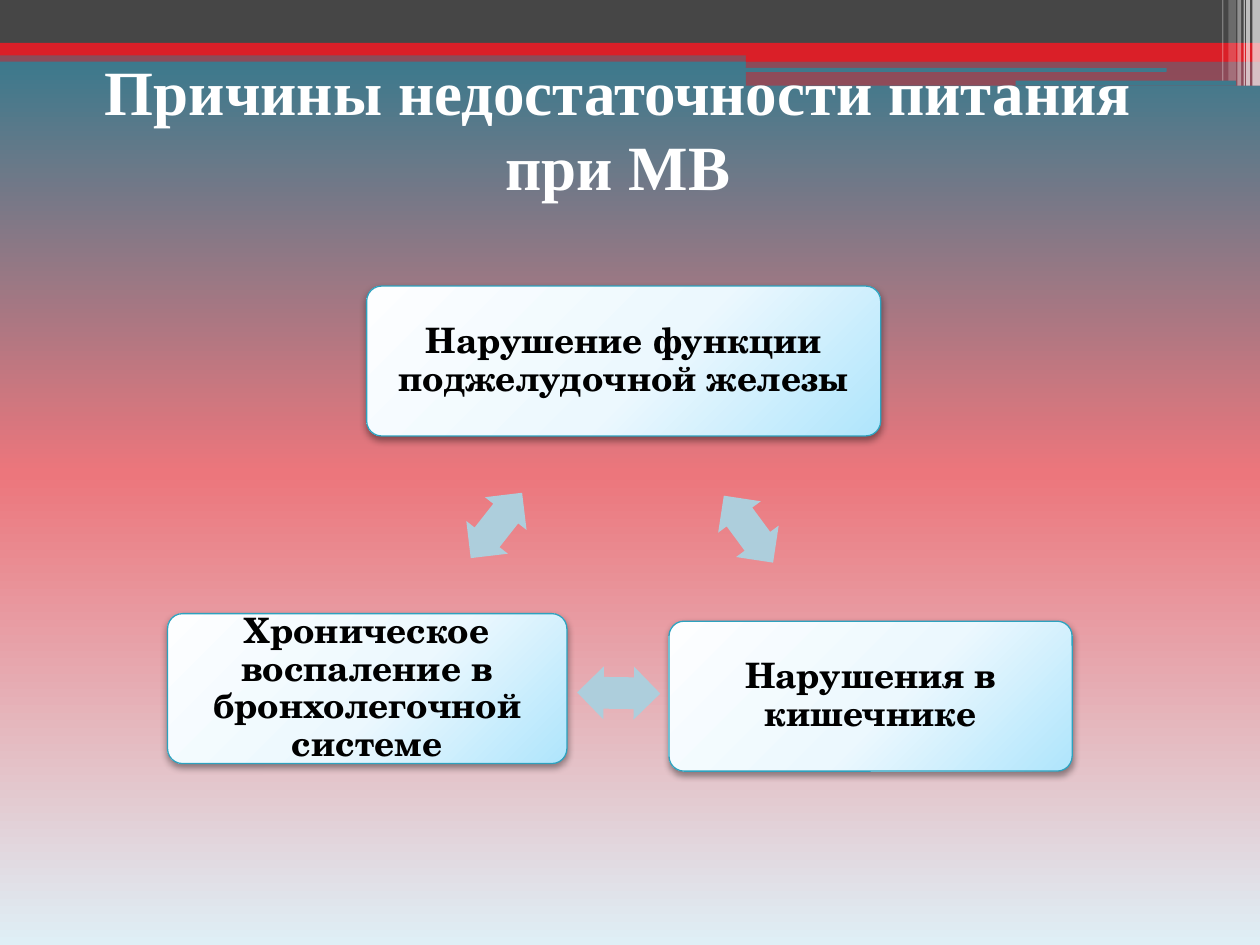
import lxml.etree
import pptx
import pptx.dml.color
import pptx.enum.shapes
import pptx.enum.text
import pptx.oxml.ns
import pptx.util

Inches = pptx.util.Inches
Pt = pptx.util.Pt
RGB = pptx.dml.color.RGBColor.from_string
SHAPE = pptx.enum.shapes.MSO_SHAPE
qn = pptx.oxml.ns.qn

theme = {
    "background": [(0, "227A8F"), (50, "EC767C"), (100, "DFEFF6")],
    "card": [(0, "FDFEFF"), (55, "ECF8FE"), (100, "AFE5FC")],
    "card line": "2DA2BF", "arrow": "ADCEDC", "shadow": "000000",
    "dark": "464646", "red": "DA1F28", "teal": "3E798C", "white": "FFFFFF",
    "title font": "Times New Roman", "title size": 36, "title text": "FFFFFF",
    "card font": "TeX Gyre Schola", "card size": 20, "card text": "000000",
}


def set_gradient(gradient, stops, circular=False):
    """Replace the stops and the direction of an a:gradFill element."""
    for child in list(gradient):
        gradient.remove(child)
    stop_list = lxml.etree.SubElement(gradient, qn("a:gsLst"))
    for position, color in stops:
        stop = lxml.etree.SubElement(stop_list, qn("a:gs"), pos=str(position * 1000))
        lxml.etree.SubElement(stop, qn("a:srgbClr"), val=color)
    if circular:
        circle = lxml.etree.SubElement(gradient, qn("a:path"), {"path": "circle"})
        lxml.etree.SubElement(circle, qn("a:fillToRect"),
                              l="-40000", t="-90000", r="140000", b="190000")
    else:
        lxml.etree.SubElement(gradient, qn("a:lin"), ang="5400000", scaled="0")


def add_plain(kind, left, top, width, height, color, opacity=100):
    """Add a shape with a solid fill, no line and no shadow."""
    shape = page.shapes.add_shape(kind, Inches(left), Inches(top),
                                  Inches(width), Inches(height))
    shape.shadow.inherit = False
    shape.line.fill.background()
    shape.fill.solid()
    shape.fill.fore_color.rgb = RGB(color)
    if opacity < 100:
        tone = shape._element.spPr.find(".//" + qn("a:srgbClr"))
        lxml.etree.SubElement(tone, qn("a:alpha"), val=str(opacity * 1000))
    return shape


deck = pptx.Presentation()
deck.slide_width, deck.slide_height = Inches(10), Inches(7.5)
page = deck.slides.add_slide(deck.slide_layouts[5])

# Background
page.background.fill.gradient()
set_gradient(page._element.find(".//" + qn("a:gradFill")), theme["background"])

# Header bands
for left, top, width, height, color, opacity in [
    (0, 0.4, 10, 0.09, "red", 50),
    (0, 0, 10, 0.34, "dark", 100),
    (0, 0.34, 10, 0.1, "red", 100),
    (5.92, 0.39, 4.08, 0.1, "red", 100),
    (5.92, 0.48, 4.08, 0.2, "red", 50),
    (5.91, 0.54, 3.35, 0.03, "teal", 100),
    (8.06, 0.64, 1.75, 0.04, "teal", 100),
]:
    kind = SHAPE.ROUNDED_RECTANGLE if color == "teal" else SHAPE.RECTANGLE
    add_plain(kind, left, top, width, height, theme[color], opacity)

# Translucent stripes in the corner
for left, width, height, opacity in [
    (9.94, 0.06, 0.68, 65), (9.89, 0.03, 0.68, 65), (9.87, 0.01, 0.68, 60),
    (9.82, 0.03, 0.68, 40), (9.75, 0.06, 0.64, 20), (9.7, 0.01, 0.64, 30),
]:
    add_plain(SHAPE.RECTANGLE, left, 0, width, height, theme["white"], opacity)

# Title, brought in front of the header
title = page.shapes.title
page.shapes._spTree.append(title._element)
title.left, title.top = Inches(0.43), Inches(0.44)
title.width, title.height = Inches(8.95), Inches(1.15)
frame = title.text_frame
frame.word_wrap = True
frame.auto_size = pptx.enum.text.MSO_AUTO_SIZE.NONE
frame.vertical_anchor = pptx.enum.text.MSO_ANCHOR.MIDDLE
para = frame.paragraphs[0]
para.alignment = pptx.enum.text.PP_ALIGN.CENTER
span = para.add_run()
span.text = "Причины недостаточности питания при МВ"
span.font.name = theme["title font"]
span.font.size = Pt(theme["title size"])
span.font.bold = True
span.font.color.rgb = RGB(theme["title text"])

# Cause cards
for left, top, width, text in [
    (2.91, 2.27, 4.08, "Нарушение функции поджелудочной железы"),
    (5.31, 4.93, 3.2, "Нарушения в кишечнике"),
    (1.33, 4.87, 3.17, "Хроническое воспаление в бронхолегочной системе"),
]:
    card = add_plain(SHAPE.ROUNDED_RECTANGLE, left, top, width, 1.19, theme["white"])
    card.adjustments[0] = 0.1
    card.fill.gradient()
    properties = card._element.spPr
    set_gradient(properties.find(qn("a:gradFill")), theme["card"], circular=True)
    card.line.color.rgb = RGB(theme["card line"])
    card.line.width = Pt(0.75)
    shadow = lxml.etree.SubElement(
        properties.find(qn("a:effectLst")), qn("a:outerShdw"),
        blurRad=str(Pt(4.1)), dist=str(Pt(2)), dir="5400000", rotWithShape="0")
    tone = lxml.etree.SubElement(shadow, qn("a:srgbClr"), val=theme["shadow"])
    lxml.etree.SubElement(tone, qn("a:alpha"), val="40000")

    frame = card.text_frame
    frame.word_wrap = True
    frame.vertical_anchor = pptx.enum.text.MSO_ANCHOR.MIDDLE
    frame.margin_left = frame.margin_right = Inches(0.1)
    frame.margin_top = frame.margin_bottom = Inches(0.1)
    para = frame.paragraphs[0]
    para.alignment = pptx.enum.text.PP_ALIGN.CENTER
    para.line_spacing = 0.9
    span = para.add_run()
    span.text = text
    span.font.name = theme["card font"]
    span.font.size = Pt(theme["card size"])
    span.font.bold = True
    span.font.color.rgb = RGB(theme["card text"])

# Two-way arrows between the cards
for left, top, angle in [(5.61, 3.99, 53.6), (4.58, 5.29, 180.8), (3.61, 3.96, 308.2)]:
    arrow = add_plain(SHAPE.LEFT_RIGHT_ARROW, left, top, 0.66, 0.42, theme["arrow"])
    arrow.adjustments[0] = 0.6
    arrow.adjustments[1] = 0.5
    arrow.rotation = angle

deck.save("out.pptx")
